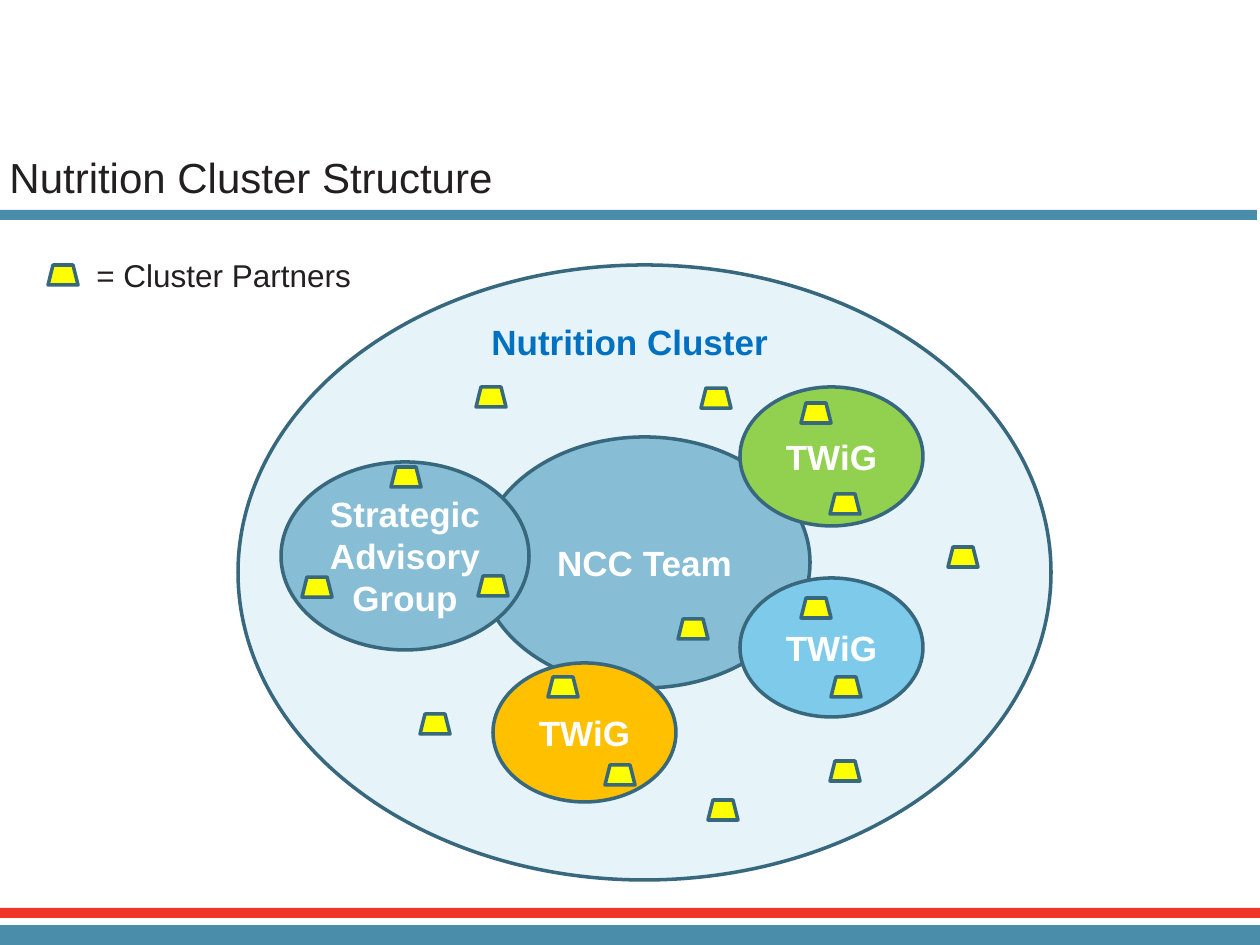
from pptx import Presentation
from pptx.dml.color import RGBColor
from pptx.enum.shapes import MSO_SHAPE
from pptx.enum.text import MSO_ANCHOR, PP_ALIGN
from pptx.util import Emu, Pt

OVAL, RECT, TRAP = MSO_SHAPE.OVAL, MSO_SHAPE.RECTANGLE, MSO_SHAPE.TRAPEZOID
MIDDLE, CENTER = MSO_ANCHOR.MIDDLE, PP_ALIGN.CENTER
SCALE = 914400 / 126
EDGE, TEAL, INK = "37687E", "4A8DAA", "231F20"

BARS = [(-3, 210, 10, TEAL), (0, 925, 20, TEAL), (0, 908, 10, "EE3528")]
GROUPS = [
    (238, 265, 813, 615, "E6F3F8", ""),
    (479, 437, 331, 251, "87BDD5", "NCC Team"),
    (740, 387, 183, 139, "92D050", "TWiG"),
    (740, 578, 183, 139, "7ECAEA", "TWiG"),
    (493, 663, 183, 139, "FFC000", "TWiG"),
    (281, 462, 248, 188, "87BDD5", "Strategic Advisory Group"),
]
PARTNERS = [
    (478, 576), (830, 494), (701, 388), (548, 677), (801, 598), (708, 800),
    (678, 619), (605, 765), (391, 467), (801, 403), (302, 577), (831, 677),
    (476, 387), (420, 714), (830, 761), (948, 547), (48, 265),
]


def px(n):
    return Emu(round(n * SCALE))


def color(code):
    return RGBColor.from_string(code)


def write(frame, text, size, ink, bold=False):
    frame.word_wrap = True
    frame.text = text
    font = frame.paragraphs[0].runs[0].font
    font.name, font.size, font.bold = "Arial", Pt(size), bold
    font.color.rgb = color(ink)


def add_form(slide, kind, left, top, width, height, fill, line=None):
    form = slide.shapes.add_shape(kind, px(left), px(top), px(width), px(height))
    form.shadow.inherit = False
    form.fill.solid()
    form.fill.fore_color.rgb = color(fill)
    if line:
        form.line.color.rgb = color(line)
        form.line.width = Pt(2)
    else:
        form.line.fill.background()
    return form


def add_group(slide, left, top, width, height, fill, name):
    oval = add_form(slide, OVAL, left, top, width, height, fill, EDGE)
    if name:
        frame = oval.text_frame
        frame.margin_left = frame.margin_right = 0
        frame.vertical_anchor = MIDDLE
        write(frame, name, 20, "FFFFFF", True)
        frame.paragraphs[0].alignment = CENTER


def add_label(slide, left, top, width, height, *style):
    box = slide.shapes.add_textbox(px(left), px(top), px(width), px(height))
    write(box.text_frame, *style)


def main():
    deck = Presentation()
    deck.slide_width, deck.slide_height = px(1260), px(945)
    slide = deck.slides.add_slide(deck.slide_layouts[6])
    for left, top, height, fill in BARS:
        add_form(slide, RECT, left, top, 1260, height, fill)
    add_label(slide, -3, 145, 853, 70, "Nutrition Cluster Structure", 24, INK)
    for group in GROUPS:
        add_group(slide, *group)
    add_label(slide, 479, 314, 310, 55, "Nutrition Cluster", 20, "0070C0", True)
    for left, top in PARTNERS:
        add_form(slide, TRAP, left, top, 30, 20, "FFFF00", EDGE)
    add_label(slide, 84, 250, 301, 50, "= Cluster Partners", 18, INK)
    deck.save("out.pptx")


if __name__ == "__main__":
    main()
